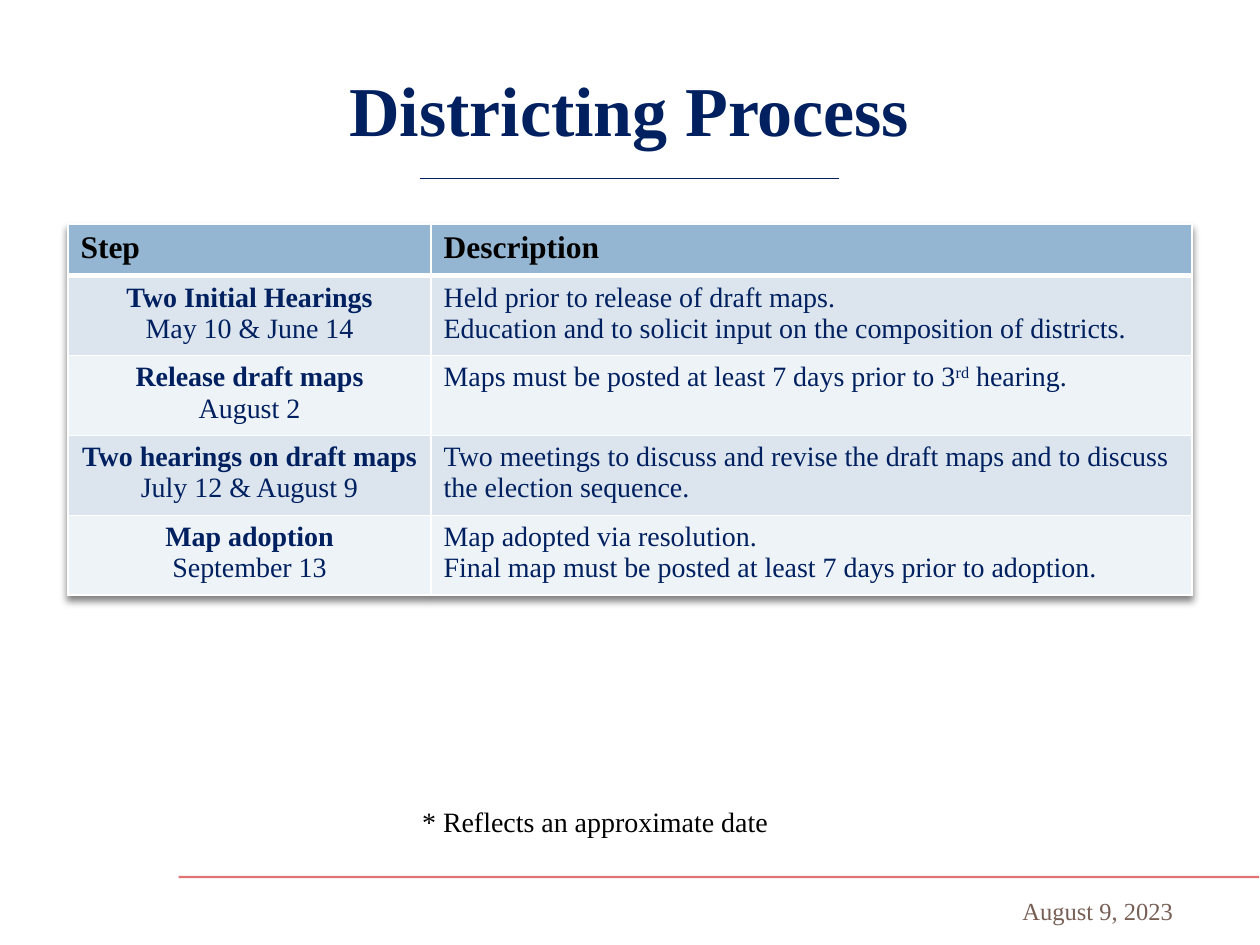
from lxml import etree
from pptx import Presentation
from pptx.dml.color import RGBColor
from pptx.enum.shapes import MSO_CONNECTOR
from pptx.enum.text import MSO_ANCHOR, PP_ALIGN
from pptx.oxml import parse_xml
from pptx.oxml.ns import nsdecls, qn
from pptx.util import Cm, Pt

STRAIGHT = MSO_CONNECTOR.STRAIGHT
LEFT, CENTER, RIGHT = PP_ALIGN.LEFT, PP_ALIGN.CENTER, PP_ALIGN.RIGHT
TOP, MIDDLE = MSO_ANCHOR.TOP, MSO_ANCHOR.MIDDLE

COLORS = {
    "navy": "002060",
    "black": "000000",
    "white": "FFFFFF",
    "brown": "775F55",
    "red": "C80000",
    "header": "94B6D2",
    "band_dark": "DCE5EE",
    "band_light": "EEF3F7",
}

# Each step: name, date, description paragraphs; a tuple is (text, superscript, text).
STEPS = [
    ("Two Initial Hearings", "May 10 & June 14",
     ["Held prior to release of draft maps.",
      "Education and to solicit input on the composition of districts."]),
    ("Release draft maps", "August 2",
     [("Maps must be posted at least 7 days prior to 3", "rd", " hearing.")]),
    ("Two hearings on draft maps", "July 12 & August 9",
     ["Two meetings to discuss and revise the draft maps and to discuss "
      "the election sequence."]),
    ("Map adoption", "September 13",
     ["Map adopted via resolution.",
      "Final map must be posted at least 7 days prior to adoption."]),
]


def rgb(color):
    return RGBColor.from_string(COLORS[color])


class SlideBuilder:
    font_name = "Times New Roman"

    def __init__(self, slide):
        self.slide = slide

    def fill_paragraph(self, paragraph, text, size, color, bold=False, align=LEFT):
        """Add styled text; the second part of a tuple is superscript."""
        parts = text if isinstance(text, tuple) else (text,)
        for index, part in enumerate(parts):
            run = paragraph.add_run()
            run.text = part
            if index == 1:
                run._r.get_or_add_rPr().set("baseline", "30000")
        paragraph.alignment = align
        font = paragraph.font
        font.name, font.size, font.bold = self.font_name, Pt(size), bold
        font.color.rgb = rgb(color)

    def text(self, left, top, width, height, text, size, color,
             bold=False, align=LEFT, anchor=TOP):
        box = self.slide.shapes.add_textbox(Cm(left), Cm(top), Cm(width), Cm(height))
        frame = box.text_frame
        frame.word_wrap = True
        frame.vertical_anchor = anchor
        self.fill_paragraph(frame.paragraphs[0], text, size, color, bold, align)

    def horizontal_line(self, left, right, y, color, width, opacity=100):
        line = self.slide.shapes.add_connector(STRAIGHT, Cm(left), Cm(y), Cm(right), Cm(y))
        line.line.color.rgb = rgb(color)
        line.line.width = Pt(width)
        properties = line._element.spPr
        if opacity < 100:
            fill_color = properties.find(".//" + qn("a:srgbClr"))
            etree.SubElement(fill_color, qn("a:alpha")).set("val", str(opacity * 1000))
        etree.SubElement(properties, qn("a:effectLst"))

    def table(self, left, top, widths, heights):
        frame = self.slide.shapes.add_table(
            len(heights), len(widths), Cm(left), Cm(top), Cm(sum(widths)), Cm(sum(heights)))
        table = frame.table
        table.horz_banding = False
        for column, width in zip(table.columns, widths):
            column.width = Cm(width)
        for row, height in zip(table.rows, heights):
            row.height = Cm(height)
        table._tbl.tblPr.insert(0, parse_xml(
            f'<a:effectLst {nsdecls("a")}>'
            '<a:outerShdw blurRad="50800" dist="38100" dir="5400000" rotWithShape="0">'
            f'<a:srgbClr val="{COLORS["black"]}"><a:alpha val="50000"/></a:srgbClr>'
            '</a:outerShdw></a:effectLst>'))
        return table

    def cell(self, cell, fill, top_border, bottom_border, paragraphs):
        """Style a cell; each paragraph is the list of arguments for fill_paragraph."""
        borders = {"lnL": 1, "lnR": 1, "lnT": top_border, "lnB": bottom_border}
        for tag, width in borders.items():
            cell._tc.get_or_add_tcPr().append(parse_xml(
                f'<a:{tag} {nsdecls("a")} w="{Pt(width)}"><a:solidFill>'
                f'<a:srgbClr val="{COLORS["white"]}"/></a:solidFill></a:{tag}>'))
        cell.fill.solid()
        cell.fill.fore_color.rgb = rgb(fill)
        frame = cell.text_frame
        for index, arguments in enumerate(paragraphs):
            paragraph = frame.add_paragraph() if index else frame.paragraphs[0]
            self.fill_paragraph(paragraph, *arguments)


def main():
    presentation = Presentation()
    presentation.slide_width, presentation.slide_height = Cm(25.4), Cm(19.05)
    builder = SlideBuilder(presentation.slides.add_slide(presentation.slide_layouts[6]))

    builder.horizontal_line(3.6, 25.38, 17.68, "red", 1.25, opacity=55)
    builder.text(0.94, 0.81, 23.5, 2.74, "Districting Process", 40, "navy",
                 bold=True, align=CENTER, anchor=MIDDLE)
    builder.horizontal_line(8.46, 16.92, 3.6, "navy", 0.75)

    table = builder.table(1.37, 4.52, [7.32, 15.34], [1.04] + [1.5] * len(STEPS))
    for column, heading in enumerate(["Step", "Description"]):
        builder.cell(table.cell(0, column), "header", 1, 3,
                     [(heading, 18, "black", True)])
    for row, (name, date, description) in enumerate(STEPS, start=1):
        fill = "band_dark" if row % 2 else "band_light"
        top_border = 3 if row == 1 else 1
        builder.cell(table.cell(row, 0), fill, top_border, 1,
                     [(name, 16, "navy", True, CENTER), (date, 16, "navy", False, CENTER)])
        builder.cell(table.cell(row, 1), fill, top_border, 1,
                     [(text, 16, "navy") for text in description])

    builder.text(19.48, 17.68, 4.42, 1.37, "August 9, 2023", 14, "brown",
                 align=RIGHT, anchor=MIDDLE)
    builder.text(8.26, 16.1, 7.62, 0.94, "* Reflects an approximate date", 16, "black")

    presentation.save("out.pptx")


if __name__ == "__main__":
    main()
